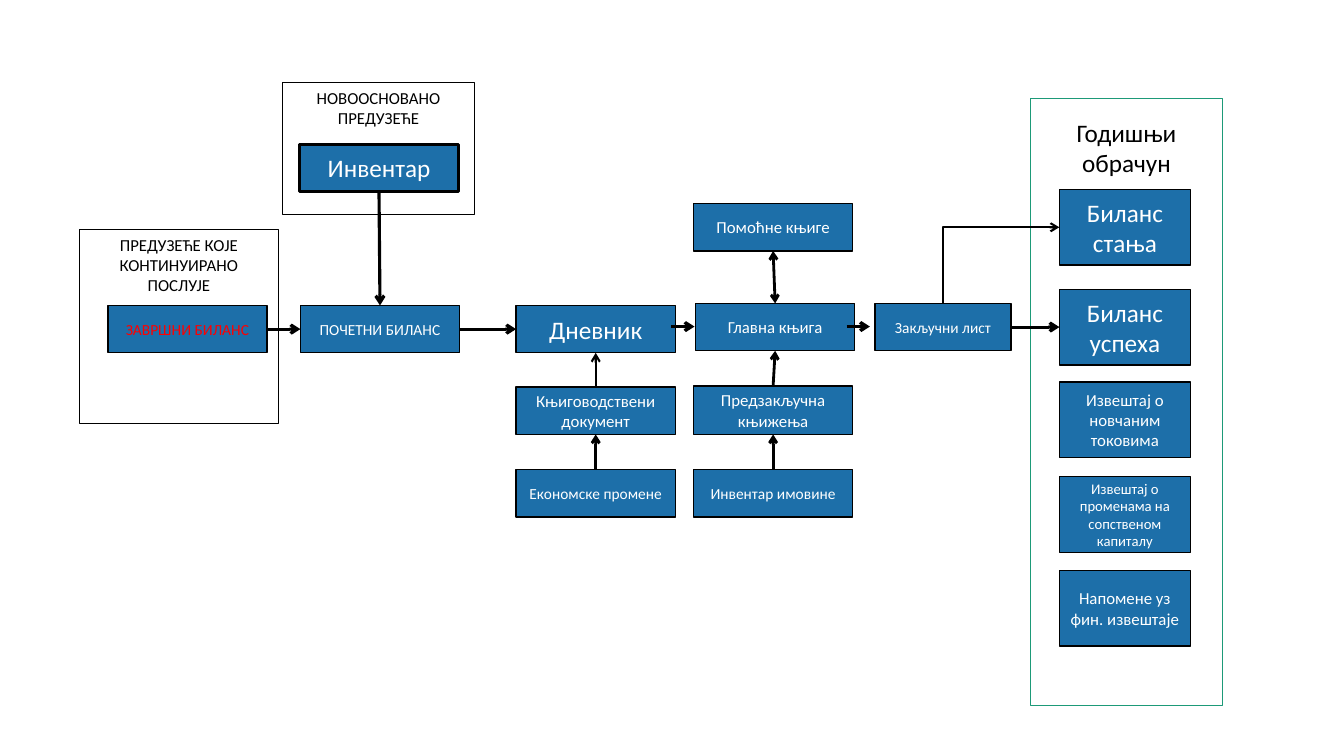
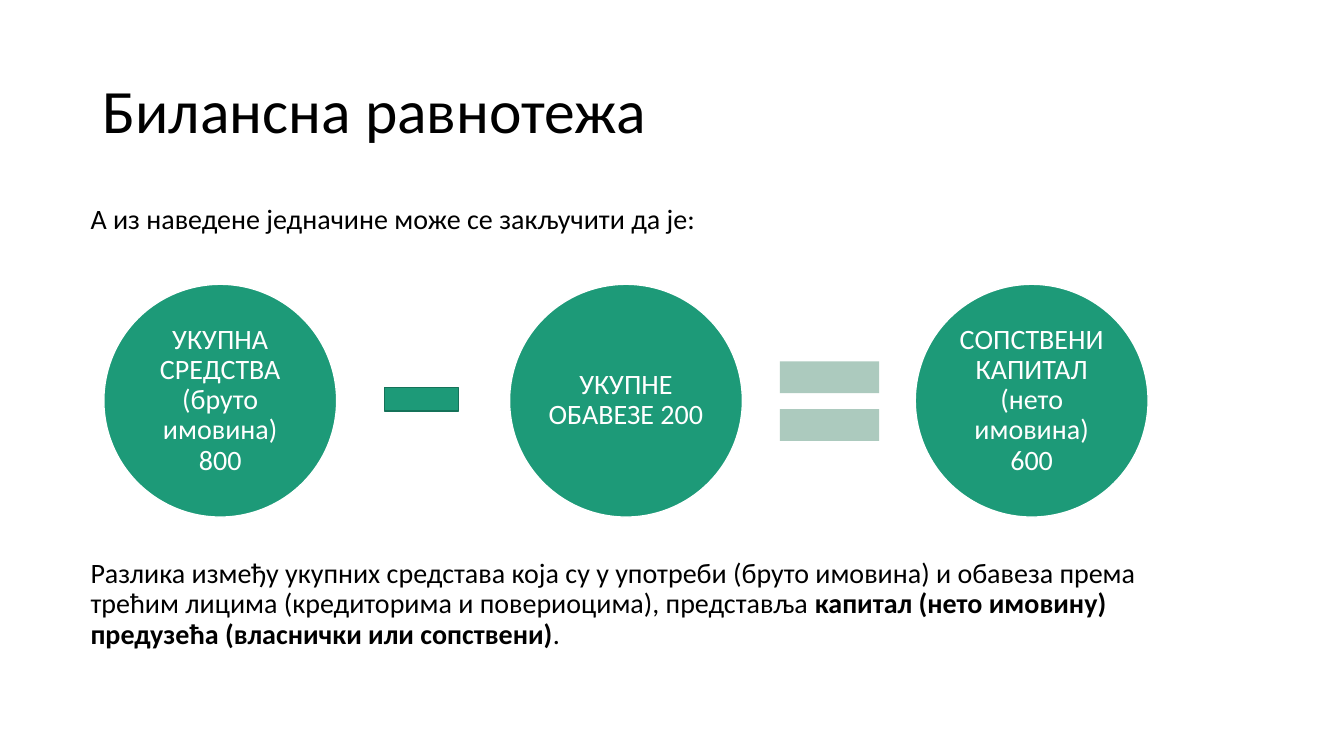
from lxml import etree
from pptx import Presentation
from pptx.dml.color import RGBColor
from pptx.enum import shapes, text
from pptx.oxml.ns import qn
from pptx import util as u

HUES = {
    "blue": "1D6FA9",
    "green": "1D9A78",
    "edge": "157259",
    "pale": "ACCABE",
    "red": "FF0000",
    "white": "FFFFFF",
    "black": "000000",
}
FONT = "Calibri"
GRID = u.Inches(0.1)
COLS, ROWS = 133.33, 75
KIND = shapes.MSO_SHAPE
TOP, MID = text.MSO_ANCHOR.TOP, text.MSO_ANCHOR.MIDDLE
LEFT, CENTER = text.PP_ALIGN.LEFT, text.PP_ALIGN.CENTER
SIDES = {"top": 0, "left": 1, "bottom": 2, "right": 3}


def hue(name):
    return RGBColor.from_string(HUES[name])


def span(*cells):
    return [int(cell * GRID) for cell in cells]


def write(frame, parts, size=12, color="white", align=CENTER, anchor=MID,
          gap=None, inset=None, head=0.5, rim=None):
    frame.word_wrap = True
    frame.vertical_anchor = anchor
    frame.margin_top = span(head)[0]
    if inset is not None:
        frame.margin_left = frame.margin_right = span(inset)[0]
        frame.margin_top = frame.margin_bottom = span(inset)[0]
    para = frame.paragraphs[0]
    para.alignment = align
    if gap:
        para.line_spacing = gap
    for words, bold in [(parts, False)] if isinstance(parts, str) else parts:
        run = para.add_run()
        run.text = words
        font = run.font
        font.name, font.size, font.bold = FONT, u.Pt(size), bold
        font.color.rgb = hue(color)
        if rim:
            line = etree.Element(qn("a:ln"), w=str(u.Pt(0.75)))
            fill = etree.SubElement(line, qn("a:solidFill"))
            etree.SubElement(fill, qn("a:srgbClr"), val=HUES[rim])
            font._element.insert(0, line)


class Deck:
    def __init__(self):
        self.show = Presentation()
        self.show.slide_width, self.show.slide_height = span(COLS, ROWS)
        self.slide = None

    def page(self):
        self.slide = self.show.slides.add_slide(self.show.slide_layouts[6])

    def shape(self, kind, place, fill=None, line=None, width=1, words=None, **look):
        item = self.slide.shapes.add_shape(kind, *span(*place))
        item.shadow.inherit = False
        if fill:
            item.fill.solid()
            item.fill.fore_color.rgb = hue(fill)
        else:
            item.fill.background()
        if line:
            item.line.color.rgb = hue(line)
            item.line.width = u.Pt(width)
        else:
            item.line.fill.background()
        if words:
            write(item.text_frame, words, **look)
        return item

    def box(self, words, x, y, w=15.8, h=4.7, size=12, width=1, **look):
        return self.shape(KIND.RECTANGLE, (x, y, w, h), "blue", "black", width,
                          words, size=size, **look)

    def frame(self, words, place, line="black", width=0.75, fill=None, **look):
        return self.shape(KIND.RECTANGLE, place, fill, line, width, words,
                          color="black", anchor=TOP, **look)

    def note(self, words, place, **look):
        item = self.slide.shapes.add_textbox(*span(*place))
        write(item.text_frame, words, color="black", align=LEFT, gap=0.9, **look)

    def arrow(self, points, width=2, ends=("tail",), bent=False):
        kind = shapes.MSO_CONNECTOR.ELBOW if bent else shapes.MSO_CONNECTOR.STRAIGHT
        item = self.slide.shapes.add_connector(kind, *span(*points))
        item.line.color.rgb = hue("black")
        item.line.width = u.Pt(width)
        props = item._element.spPr
        if bent:
            props.find(qn("a:prstGeom")).set("prst", "bentConnector2")
        line = props.find(qn("a:ln"))
        for end in ends:
            etree.SubElement(line, qn(f"a:{end}End"), type="arrow")
        etree.SubElement(props, qn("a:effectLst"))
        return item

    def link(self, start, out, stop, into, **look):
        item = self.arrow((0, 0, 0, 0), **look)
        item.begin_connect(start, SIDES[out])
        item.end_connect(stop, SIDES[into])


def flow(deck):
    deck.page()
    deck.frame("Годишњи обрачун", (102.2, 9.8, 19.1, 60.2), "green", 1, "white",
               size=18, head=1.8)
    close = deck.box("ЗАВРШНИ БИЛАНС", 10.7, 30.3, size=11, color="red", rim="white")
    start = deck.box("ПОЧЕТНИ БИЛАНС", 29.8, 30.3, size=11)
    diary = deck.box("Дневник", 51.2, 30.3, size=18)
    main = deck.box("Главна књига", 69, 30.1)
    sheet = deck.box("Закључни лист", 86.8, 30.1, w=13.5, size=11)
    stock = deck.box("Инвентар", 29.7, 14.3, size=18, width=2)
    side = deck.box("Помоћне књиге", 68.8, 20.2)
    paper = deck.box("Књиговодствени документ", 51.2, 38.4)
    change = deck.box("Економске промене", 51.2, 46.6, size=11)
    entry = deck.box("Предзакључна књижења", 68.8, 38.3, h=4.8)
    goods = deck.box("Инвентар имовине", 68.8, 46.6, size=11)
    state, gain, *_ = [
        deck.box(words, 105.1, y, w=13, h=7.5, size=size)
        for words, y, size in (
            ("Биланс стања", 18.8, 18),
            ("Биланс успеха", 28.7, 18),
            ("Извештај о новчаним токовима", 37.9, 12),
            ("Извештај о променама на сопственом капиталу", 47.3, 10.5),
            ("Напомене уз фин. извештаје", 56.6, 12),
        )
    ]
    for left, right in ((close, start), (start, diary), (sheet, gain)):
        deck.link(left, "right", right, "left", width=2.25)
    for x in (66.6, 84):
        deck.arrow((x, 32.4, x + 2.3, 32.4), width=2.25)
    deck.link(stock, "bottom", start, "top", width=2.25)
    for low, high, width in ((paper, diary, 1.5), (change, paper, 2),
                             (goods, entry, 2), (entry, main, 2)):
        deck.link(low, "top", high, "bottom", width=width)
    deck.link(side, "bottom", main, "top", ends=("head", "tail"))
    deck.link(state, "left", sheet, "top", width=1.5, ends=("head",), bent=True)
    deck.frame("НОВООСНОВАНО ПРЕДУЗЕЋЕ", (28, 8.2, 19.1, 13.1))
    deck.frame("ПРЕДУЗЕЋЕ КОЈЕ КОНТИНУИРАНО ПОСЛУЈЕ", (7.9, 22.8, 19.7, 19.2))


def sums(deck):
    deck.page()
    deck.note("Билансна равнотежа", (9.2, 4, 115, 14.5), size=44)
    deck.note("А из наведене једначине може се закључити да је:",
              (8, 19.9, 115, 4), size=20, anchor=TOP)
    terms = ("УКУПНА СРЕДСТВА (бруто имовина) 800", "УКУПНЕ ОБАВЕЗЕ 200",
             "СОПСТВЕНИ КАПИТАЛ (нето имовина) 600")
    for step, words in enumerate(terms):
        deck.shape(KIND.OVAL, (10.3 + step * 40.25, 28.2, 23.1, 23.1), "green",
                   "white", words=words, size=20, gap=0.9, inset=0.3)
    deck.shape(KIND.MATH_MINUS, (36.8, 34.6, 10, 10), "green", "edge")
    deck.shape(KIND.MATH_EQUAL, (75.6, 33.1, 13.4, 13.4), "pale")
    deck.note(
        [("Разлика између укупних средстава која су у употреби (бруто имовина) и "
          "обавеза према трећим лицима (кредиторима и повериоцима), представља ", False),
         ("капитал (нето имовину) предузећа (власнички или сопствени)", True),
         (".", False)],
        (8, 55, 109, 12), size=20, anchor=TOP)


def main():
    deck = Deck()
    flow(deck)
    sums(deck)
    deck.show.save("out.pptx")


if __name__ == "__main__":
    main()
